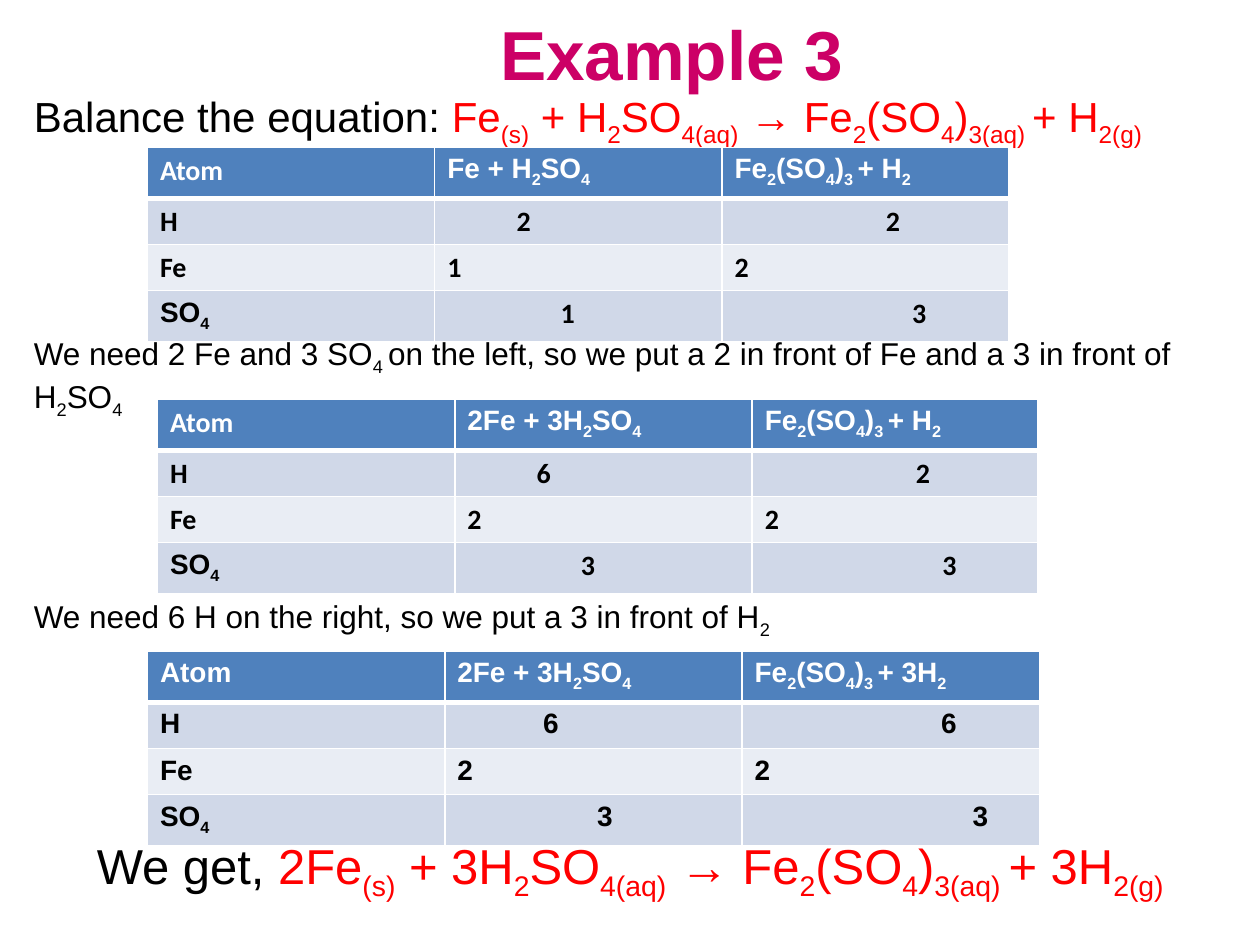
from lxml import etree
from pptx import Presentation
from pptx.dml.color import RGBColor
from pptx.enum import text
from pptx.oxml.ns import qn
from pptx.util import Emu, Pt

PX = 9144
COLORS = {
    "title": "CC0066", "body": "000000", "formula": "FF0000", "white": "FFFFFF",
    "header": "4F81BD", "odd": "D0D8E8", "even": "E9EDF4",
}
INDENTS = {"Calibri": [(55, 120), (90, 141)], "Arial": [(68, 148), (111, 173)]}


def px(length):
    """Turn px into EMU."""
    return Emu(length * PX)


def rgb(name):
    """Look up a named colour."""
    return RGBColor.from_string(COLORS[name])


def write(para, pieces, size, font="Arial", bold=False):
    """Write (wording, colour) pieces, lowering whatever stands between tildes."""
    para.font.size, para.font.name, para.font.bold = Pt(size), font, bold
    for wording, color in pieces:
        for index, part in enumerate(wording.split("~")):
            if part:
                span = para.add_run()
                span.text = part
                span.font.color.rgb = rgb(color)
                if index % 2:
                    span._r.get_or_add_rPr().set("baseline", "-25000")


def add_text(page, box, pieces, size, bold=False, wrap=True):
    """Place one paragraph in a text box and return its frame."""
    frame = page.shapes.add_textbox(*map(px, box)).text_frame
    frame.word_wrap = wrap
    write(frame.paragraphs[0], pieces, size, bold=bold)
    return frame


def add_title(page, box, wording):
    """Place the centred heading."""
    frame = add_text(page, box, [(wording, "title")], 39.6, bold=True)
    frame.vertical_anchor = text.MSO_ANCHOR.MIDDLE
    frame.paragraphs[0].alignment = text.PP_ALIGN.CENTER


def add_borders(cell, top, bottom):
    """Give a cell white borders with the top and bottom widths in points."""
    properties = cell._tc.get_or_add_tcPr()
    for side, width in (("L", 1), ("R", 1), ("T", top), ("B", bottom)):
        line = etree.SubElement(properties, qn(f"a:ln{side}"), w=str(Pt(width)))
        fill = etree.SubElement(line, qn("a:solidFill"))
        etree.SubElement(fill, qn("a:srgbClr"), val=COLORS["white"])


def add_atom_table(page, box, widths, sides, counts, font):
    """Place a table that counts each atom on both sides of the equation."""
    left, top, height = box
    frame = page.shapes.add_table(4, 3, px(left), px(top), px(sum(widths)), px(140))
    table = frame.table
    for column, width in zip(table.columns, widths):
        column.width = px(width)
    frame.height = px(height)
    atoms = ("H", "Fe", "SO~4~")
    rows = [("Atom", *sides), *((atom, *pair) for atom, pair in zip(atoms, counts))]
    first, last = INDENTS[font]
    indents = [(0, 0, 0), (0, *first), (0, 0, 0), (0, *last)]
    for row, (wordings, shifts) in enumerate(zip(rows, indents)):
        for column, (wording, shift) in enumerate(zip(wordings, shifts)):
            cell = table.cell(row, column)
            add_borders(cell, 3 if row == 1 else 1, 3 if row == 0 else 1)
            cell.fill.solid()
            cell.fill.fore_color.rgb = rgb(("header", "odd", "even", "odd")[row])
            cell.margin_left = px(10 + shift)
            write(cell.text_frame.paragraphs[0],
                  [(wording, "body" if row else "white")], 16,
                  "Arial" if "~" in wording else font, True)


def build_slide(page):
    """Place the heading, the working steps and the balanced equation."""
    add_title(page, (108, 17, 850, 50), "Example 3")
    add_text(page, (17, 67, 958, 50), [
        ("Balance the equation: ", "body"),
        ("Fe~(s)~ + H~2~SO~4(aq)~ → Fe~2~(SO~4~)~3(aq) ~+ H~2(g)~", "formula"),
    ], 24)
    add_text(page, (17, 260, 958, 70), [
        ("We need 2 Fe and 3 SO~4 ~on the left, so we put a 2 in front of Fe "
         "and a 3 in front of H~2~SO~4~", "body"),
    ], 18)
    add_text(page, (17, 469, 958, 40), [
        ("We need 6 H on the right, so we put a 3 in front of H~2~", "body"),
    ], 18)
    product = "Fe~2~(SO~4~)~3 ~+ "
    add_atom_table(page, (117, 117, 147), (228, 228, 228),
                   ("Fe + H~2~SO~4~", product + "H~2~"),
                   ("22", "12", "13"), "Calibri")
    add_atom_table(page, (125, 317, 147), (236, 236, 227),
                   ("2Fe + 3H~2~SO~4~", product + "H~2~"),
                   ("62", "22", "33"), "Calibri")
    add_atom_table(page, (117, 517, 147), (236, 236, 236),
                   ("2Fe + 3H~2~SO~4~", product + "3H~2~"),
                   ("66", "22", "33"), "Arial")
    add_text(page, (67, 658, 917, 57), [
        ("We get, ", "body"),
        ("2Fe~(s)~ + 3H~2~SO~4(aq)~ → Fe~2~(SO~4~)~3(aq) ~+ 3H~2(g)~", "formula"),
    ], 28, wrap=False)


def main():
    """Build and save the deck."""
    deck = Presentation()
    deck.slide_width, deck.slide_height = px(1000), px(750)
    build_slide(deck.slides.add_slide(deck.slide_layouts[6]))
    deck.save("out.pptx")


if __name__ == "__main__":
    main()
